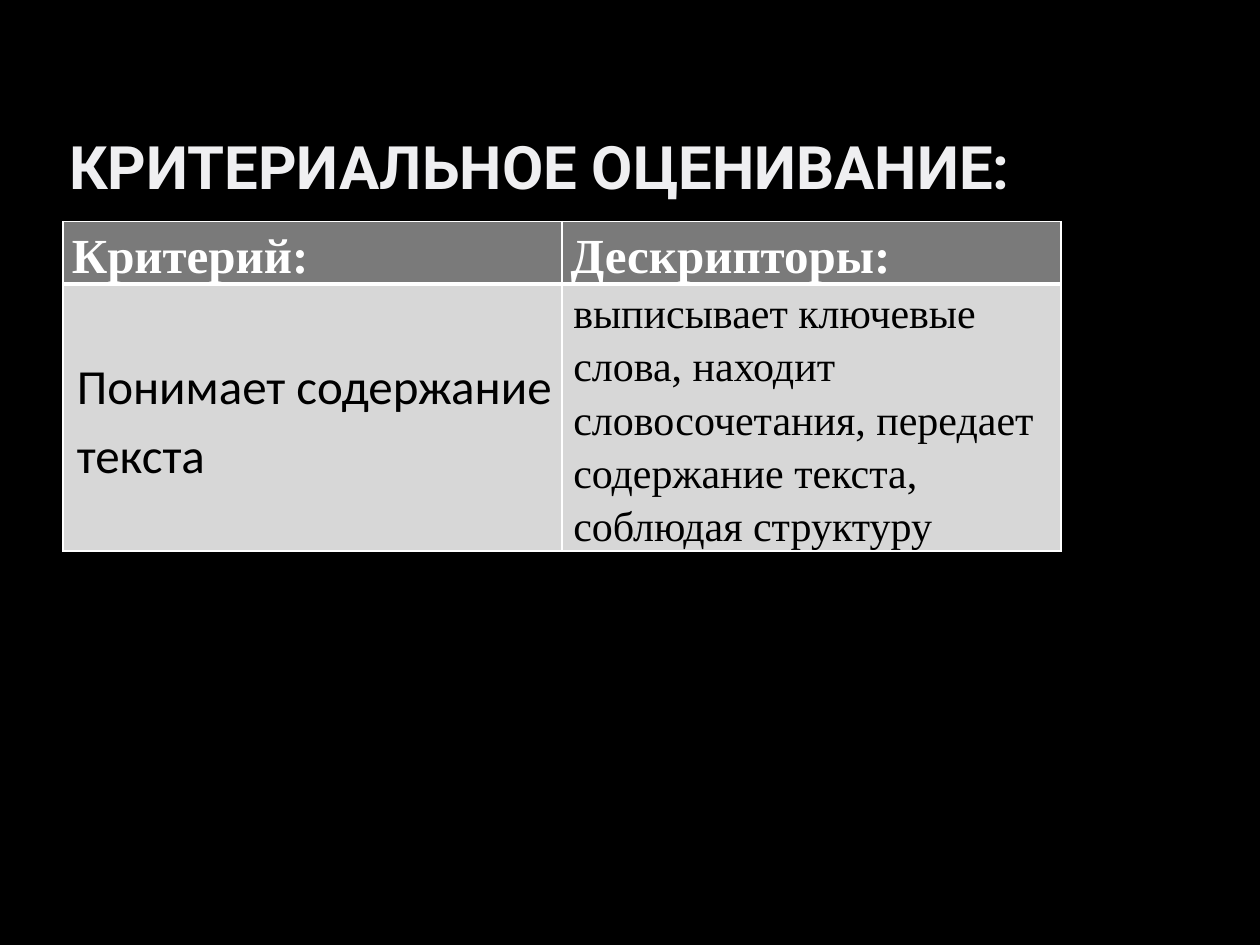
from pptx import Presentation
from pptx.dml.color import RGBColor
from pptx.enum.text import MSO_ANCHOR, PP_ALIGN
from pptx.oxml.ns import qn
from pptx.util import Inches, Pt
from lxml.etree import SubElement

HUES = {"back": "000000", "title": "EFEFF1", "head": "7A7A7A",
        "body": "D7D7D7", "white": "FFFFFF", "black": "000000"}
SERIF = "Times New Roman"
HEAD = ["Критерий:", "Дескрипторы:"]
BODY = [
    ("Понимает содержание текста", "Calibri", 28, 0.04),
    ("выписывает ключевые слова, находит словосочетания, передает "
     "содержание текста, соблюдая структуру", SERIF, 24, 0.02),
]


def tint(name):
    return RGBColor.from_string(HUES[name])


class Deck:
    def __init__(self):
        self.prs = Presentation()
        self.prs.slide_width, self.prs.slide_height = Inches(10), Inches(7.5)
        self.slide = self.prs.slides.add_slide(self.prs.slide_layouts[5])
        fill = self.slide.background.fill
        fill.solid()
        fill.fore_color.rgb = tint("back")

    def style(self, para, face, size, hue, bold=False):
        for run in para.runs:
            font = run.font
            font.name, font.size, font.bold = face, Pt(size), bold
            font.color.rgb = tint(hue)

    def title(self, text, left, top, width, height):
        box = self.slide.shapes.title
        box.left, box.top = Inches(left), Inches(top)
        box.width, box.height = Inches(width), Inches(height)
        frame = box.text_frame
        frame.text = text
        frame.vertical_anchor = MSO_ANCHOR.BOTTOM
        frame.margin_left = frame.margin_right = Inches(0.05)
        frame.margin_top = frame.margin_bottom = 0
        para = frame.paragraphs[0]
        para.alignment = PP_ALIGN.LEFT
        self.style(para, "Roboto", 34.2, "title", True)

    def table(self, left, top, width, rows):
        grid = self.slide.shapes.add_table(
            len(rows), 2, Inches(left), Inches(top),
            Inches(width), Inches(sum(rows))).table
        for row, high in zip(grid.rows, rows):
            row.height = Inches(high)
        return grid

    def border(self, cell, **widths):
        """Draw white cell edges; keys are L, R, T and B, values are points."""
        props = cell._tc.get_or_add_tcPr()
        for side, wide in widths.items():
            line = SubElement(props, qn(f"a:ln{side}"), w=str(Pt(wide)))
            fill = SubElement(line, qn("a:solidFill"))
            SubElement(fill, qn("a:srgbClr"), val=HUES["white"])

    def cell(self, cell, text, face, size, hue, fill, edges,
             bold=False, indent=0):
        cell.text_frame.text = text
        cell.margin_left = cell.margin_right = Inches(0.07)
        cell.margin_top = cell.margin_bottom = 0
        self.border(cell, **edges)
        cell.fill.solid()
        cell.fill.fore_color.rgb = tint(fill)
        para = cell.text_frame.paragraphs[0]
        para.line_spacing = 1.15
        if indent:
            props = para._p.get_or_add_pPr()
            props.set("marL", str(Inches(indent)))
            props.set("indent", "0")
        self.style(para, face, size, hue, bold)


def main():
    deck = Deck()
    deck.title("КРИТЕРИАЛЬНОЕ ОЦЕНИВАНИЕ:", 0.5, 0.35, 7.92, 1.25)
    grid = deck.table(0.5, 1.76, 7.92, [0.49, 2.12])
    thin = dict(L=1, R=1, T=1, B=1)
    for col, text in enumerate(HEAD):
        deck.cell(grid.cell(0, col), text, SERIF, 28, "white", "head",
                  {**thin, "B": 3}, bold=True)
    for col, (text, face, size, indent) in enumerate(BODY):
        deck.cell(grid.cell(1, col), text, face, size, "black", "body",
                  {**thin, "T": 3}, indent=indent)
    grid.cell(1, 0).vertical_anchor = MSO_ANCHOR.MIDDLE
    deck.prs.save("out.pptx")


if __name__ == "__main__":
    main()
